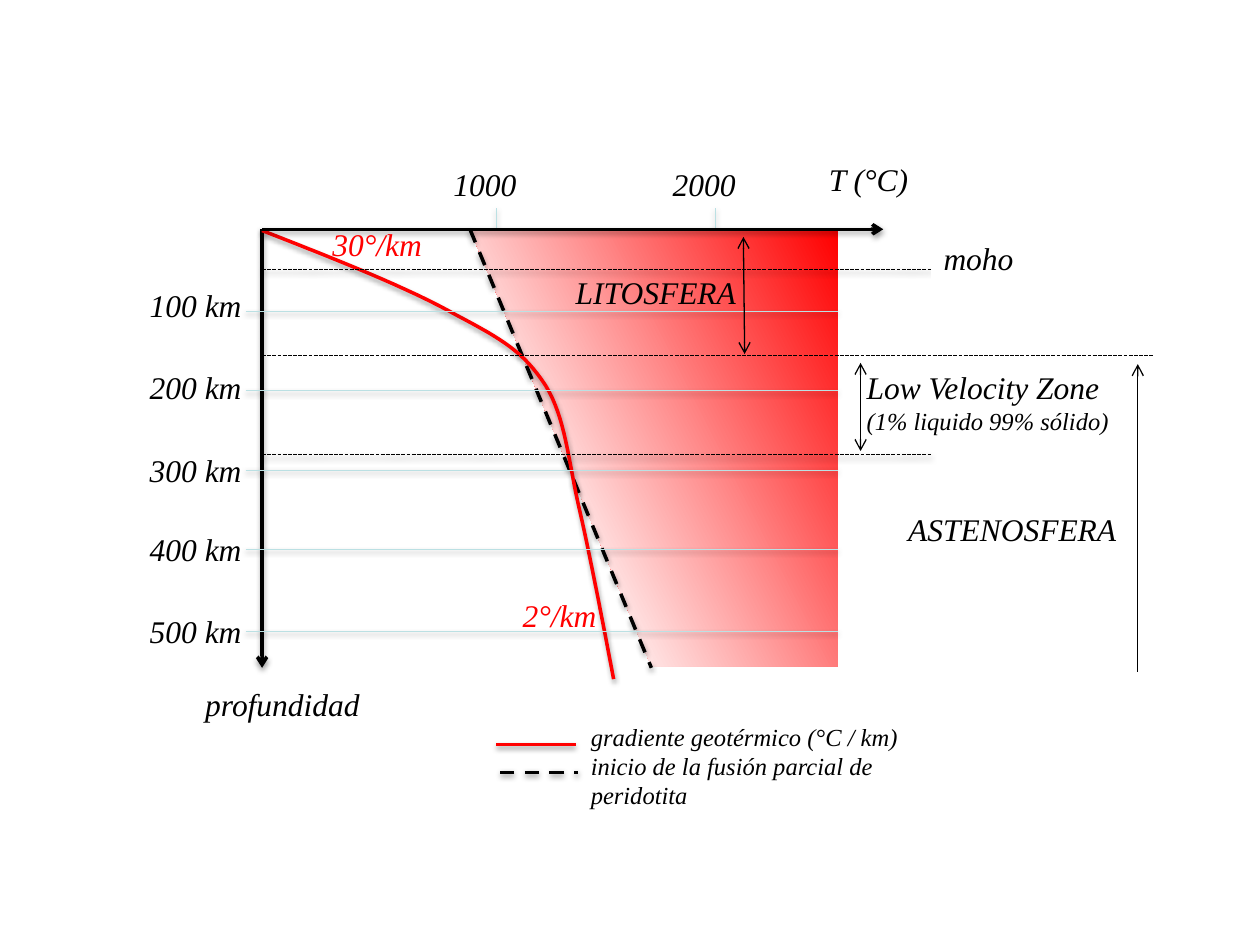
"""Build the slide on the geothermal gradient and the onset of peridotite melting."""
from lxml.etree import SubElement
from pptx import Presentation
from pptx.dml.color import RGBColor
from pptx.enum.dml import MSO_LINE_DASH_STYLE as Dash
from pptx.enum.shapes import MSO_CONNECTOR as Connector, MSO_SHAPE as Shape
from pptx.enum.text import MSO_ANCHOR as Anchor, MSO_AUTO_SIZE as AutoSize, PP_ALIGN as Align
from pptx.oxml.ns import qn
from pptx.util import Inches, Pt

BLACK = RGBColor(0x00, 0x00, 0x00)
WHITE = RGBColor(0xFF, 0xFF, 0xFF)
RED = RGBColor(0xFF, 0x00, 0x00)
PALE_BLUE = RGBColor(0xBB, 0xE0, 0xE3)

LEFT, TOP, RIGHT = 2.08, 1.82, 6.65
SOFT_SHADOW = (38, 1.6)
DASHED_SHADOW = (35, 1.8)


def bezier_points(start, curves, steps=16):
    """Return points along a chain of cubic curves."""
    points = [start]
    for first, second, end in curves:
        for step in range(1, steps + 1):
            t = step / steps
            weights = ((1 - t) ** 3, 3 * t * (1 - t) ** 2, 3 * t * t * (1 - t), t ** 3)
            corners = (start, first, second, end)
            points.append(tuple(sum(w * c[axis] for w, c in zip(weights, corners))
                                for axis in (0, 1)))
        start = end
    return points


class Diagram:
    """Draw styled elements on one slide."""

    font_name = "Times New Roman"

    def __init__(self, page):
        self.shapes = page.shapes

    def set_text(self, shape, lines, color):
        frame = shape.text_frame
        frame.word_wrap = True
        frame.auto_size = AutoSize.SHAPE_TO_FIT_TEXT
        frame.vertical_anchor = Anchor.TOP
        frame.text = "\n".join(text for text, _ in lines)
        for para, (_, size) in zip(frame.paragraphs, lines):
            para.alignment = Align.LEFT
            for span in para.runs:
                span.font.name = self.font_name
                span.font.size = Pt(size)
                span.font.italic = True
                span.font.color.rgb = color

    def label(self, text, left, top, width, height=0.4, size=18, color=BLACK):
        box = self.shapes.add_textbox(*map(Inches, (left, top, width, height)))
        self.set_text(box, [(text, size)], color)

    def panel(self, lines, left, top, width, height):
        box = self.shapes.add_shape(Shape.RECTANGLE, *map(Inches, (left, top, width, height)))
        box.shadow.inherit = False
        box.fill.solid()
        box.fill.fore_color.rgb = WHITE
        box.line.fill.background()
        self.set_text(box, lines, BLACK)

    def effects(self, shape, shadow):
        effects = SubElement(shape._element.spPr, qn("a:effectLst"))
        if shadow:
            opacity, distance = shadow
            outer = SubElement(effects, qn("a:outerShdw"), blurRad=str(Pt(3.1)),
                               dist=str(Pt(distance)), dir="5400000", rotWithShape="0")
            color = SubElement(outer, qn("a:srgbClr"), val=str(BLACK))
            SubElement(color, qn("a:alpha"), val=str(opacity * 1000))

    def line(self, start, end, color=BLACK, width=2, dash=None, ends=(), shadow=SOFT_SHADOW):
        line = self.shapes.add_connector(Connector.STRAIGHT, *map(Inches, start + end))
        line.line.color.rgb = color
        line.line.width = Pt(width)
        if dash:
            line.line.dash_style = dash
        for name in ends:
            SubElement(line._element.spPr.find(qn("a:ln")), qn(f"a:{name}"), type="arrow")
        self.effects(line, shadow)

    def boundary(self, depth, right):
        self.line((LEFT, depth), (right, depth), width=0.75, dash=Dash.SQUARE_DOT,
                  shadow=DASHED_SHADOW)

    def span_arrow(self, start, end, ends=("headEnd", "tailEnd")):
        self.line(start, end, width=0.75, ends=ends, shadow=None)

    def outline(self, points, close):
        scaled = [(Inches(x), Inches(y)) for x, y in points]
        builder = self.shapes.build_freeform(*scaled[0])
        builder.add_line_segments(scaled[1:], close=close)
        return builder.convert_to_shape()

    def melting_field(self, points):
        field = self.outline(points, True)
        field.line.fill.background()
        field.fill.gradient()
        field.fill.gradient_angle = 207
        for stop, (position, color) in zip(field.fill.gradient_stops, ((0, RED), (0.78, WHITE))):
            stop.position = position
            stop.color.rgb = color
        self.effects(field, None)

    def curve(self, points):
        curve = self.outline(points, False)
        curve.fill.background()
        curve.line.color.rgb = RED
        curve.line.width = Pt(2)
        self.effects(curve, SOFT_SHADOW)


def main():
    deck = Presentation()
    deck.slide_width, deck.slide_height = Inches(10), Inches(7.5)
    diagram = Diagram(deck.slides.add_slide(deck.slide_layouts[6]))

    diagram.line((LEFT, TOP), (LEFT, 5.3), ends=("tailEnd",))
    diagram.label("T (°C)", 6.48, 1.22, 1.89)
    diagram.label("profundidad", 1.53, 5.39, 1.81)
    for text, tick, left in (("1000", 3.94, 3.5), ("2000", 5.68, 5.24)):
        diagram.line((tick, 1.83), (tick, 1.65), PALE_BLUE, 0.5)
        diagram.label(text, left, 1.26, 1.07)
    for depth, top in zip(range(100, 600, 100), (2.22, 2.87, 3.53, 4.16, 4.81)):
        diagram.label(f"{depth} km", 1.09, top, 1.07)

    diagram.line((3.94, 5.91), (4.57, 5.91), RED)
    diagram.label("gradiente geotérmico (°C / km)", 4.59, 5.68, 5.01, 0.34, 14)
    diagram.line((3.97, 6.13), (4.59, 6.13), dash=Dash.DASH)
    diagram.label("inicio de la fusión parcial de peridotita", 4.59, 5.91, 2.98, 0.57, 14)

    diagram.panel([("Low Velocity Zone", 18), ("(1% liquido 99% sólido)", 14)],
                  6.78, 2.87, 2.13, 0.64)
    diagram.melting_field([(3.73, TOP), (5.17, 5.29), (RIGHT, 5.29), (RIGHT, 1.83)])
    diagram.line((3.73, TOP), (5.17, 5.3), dash=Dash.DASH)
    diagram.curve(bezier_points((LEFT, 1.83), [
        ((2.67, 2.06), (3.25, 2.29), (3.62, 2.5)),
        ((4, 2.7), (4.16, 2.8), (4.33, 3.06)),
        ((4.49, 3.32), (4.51, 3.66), (4.6, 4.05)),
        ((4.69, 4.43), (4.87, 5.39), (4.87, 5.39)),
    ]))

    diagram.boundary(2.82, 9.15)
    diagram.boundary(3.61, 7.39)
    for depth in (2.47, 3.1, 3.73, 4.36, 5.01):
        diagram.line((1.95, depth), (RIGHT, depth), PALE_BLUE, 0.5)
    diagram.line((LEFT, TOP), (7.01, TOP), ends=("tailEnd",))
    diagram.boundary(2.14, 7.39)
    diagram.panel([("moho", 18)], 7.39, 1.85, 0.93, 0.4)

    diagram.span_arrow((6.83, 2.88), (6.83, 3.58))
    diagram.span_arrow((5.9, 1.88), (5.91, 2.81))
    diagram.span_arrow((9.03, 2.89), (9.03, 5.33), ends=("headEnd",))
    diagram.label("LITOSFERA", 4.47, 2.12, 1.71)
    diagram.label("ASTENOSFERA", 7.11, 4, 1.87)
    diagram.label("30°/km", 2.54, 1.74, 1.01, color=RED)
    diagram.label("2°/km", 4.05, 4.68, 1.01, color=RED)

    deck.save("out.pptx")


if __name__ == "__main__":
    main()
